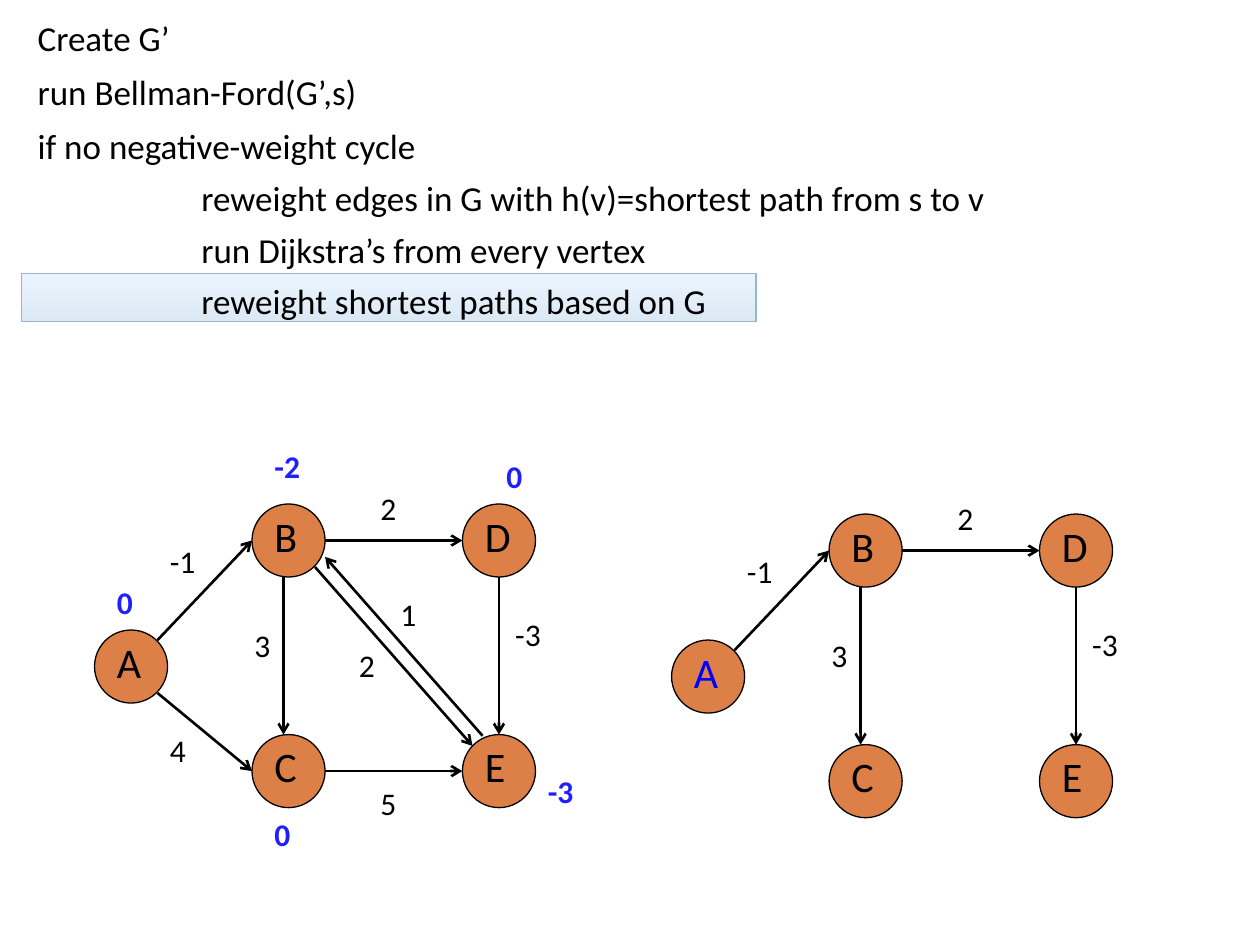
from dataclasses import dataclass

from lxml import etree
from pptx import Presentation
from pptx.dml.color import RGBColor
from pptx.enum.shapes import MSO_CONNECTOR, MSO_SHAPE
from pptx.enum.text import MSO_AUTO_SIZE
from pptx.oxml.ns import qn
from pptx.util import Inches, Pt

STRAIGHT = MSO_CONNECTOR.STRAIGHT
CIRCLE = MSO_SHAPE.OVAL
RECTANGLE = MSO_SHAPE.RECTANGLE
GROW = MSO_AUTO_SIZE.SHAPE_TO_FIT_TEXT
BLANK_LAYOUT = 6


@dataclass(frozen=True)
class Theme:
    font: str = "Calibri"
    ink: str = "000000"
    node: str = "DD8047"
    start: str = "0000FF"
    distance: str = "1F1FFF"
    band_line: str = "94B6D2"
    band_stops: tuple = ("8BB7DB", "BDDFFF")
    band_opacity: int = 30
    step_size: int = 20
    node_size: int = 24
    label_size: int = 18


class GraphSlide:
    def __init__(self, slide, theme):
        self.shapes = slide.shapes
        self.theme = theme

    def format_runs(self, paragraph, size, color, bold=False):
        for run in paragraph.runs:
            run.font.name = self.theme.font
            run.font.size = Pt(size)
            run.font.bold = bold
            run.font.color.rgb = RGBColor.from_string(color)

    def text(self, shapes, text, box, size, color, bold=False, wrap=True):
        shape = shapes.add_textbox(*map(Inches, box))
        text_frame = shape.text_frame
        text_frame.word_wrap = wrap
        text_frame.auto_size = GROW
        text_frame.text = text
        self.format_runs(text_frame.paragraphs[0], size, color, bold)

    def label(self, text, left, top, color, bold=False):
        width = 0.43 if len(text) > 1 else 0.34
        self.text(self.shapes, text, (left, top, width, 0.4),
                  self.theme.label_size, color, bold, wrap=False)

    def node(self, name, left, top, color):
        group = self.shapes.add_group_shape()
        circle = group.shapes.add_shape(
            CIRCLE, *map(Inches, (left, top, 0.58, 0.58)))
        circle.shadow.inherit = False
        circle.fill.solid()
        circle.fill.fore_color.rgb = RGBColor.from_string(self.theme.node)
        circle.line.color.rgb = RGBColor.from_string(self.theme.ink)
        circle.line.width = Pt(0.75)
        self.text(group.shapes, name, (left + 0.08, top, 0.5, 0.5),
                  self.theme.node_size, color)

    def arrow(self, x1, y1, x2, y2):
        connector = self.shapes.add_connector(
            STRAIGHT, *map(Inches, (x1, y1, x2, y2)))
        connector.line.color.rgb = RGBColor.from_string(self.theme.ink)
        connector.line.width = Pt(1.5)
        line = connector.line._get_or_add_ln()
        etree.SubElement(line, qn("a:tailEnd"), type="arrow")
        etree.SubElement(connector._element.spPr, qn("a:effectLst"))

    def graph(self, nodes, edges, dx=0, dy=0, start_color=None):
        """Draw nodes, then weighted edges, shifted by (dx, dy)."""
        for name in nodes:
            left, top = NODES[name]
            color = start_color if name == "A" and start_color else self.theme.ink
            self.node(name, left + dx, top + dy, color)
        for edge in edges:
            (x1, y1, x2, y2), weight, (left, top) = EDGES[edge]
            self.arrow(x1 + dx, y1 + dy, x2 + dx, y2 + dy)
            self.label(weight, left + dx, top + dy, self.theme.ink)

    def band(self, left, top, width, height):
        shape = self.shapes.add_shape(
            RECTANGLE, *map(Inches, (left, top, width, height)))
        shape.shadow.inherit = False
        shape.fill.gradient()
        shape.fill.gradient_angle = 90
        for stop, color in zip(shape.fill.gradient_stops, self.theme.band_stops):
            stop.color.rgb = RGBColor.from_string(color)
        for color in shape._element.spPr.iter(qn("a:srgbClr")):
            etree.SubElement(color, qn("a:alpha"),
                             val=str(self.theme.band_opacity * 1000))
        shape.line.color.rgb = RGBColor.from_string(self.theme.band_line)
        shape.line.width = Pt(0.79)

    def steps(self, steps, left, top, width, height):
        shape = self.shapes.add_textbox(
            *map(Inches, (left, top, width, height)))
        text_frame = shape.text_frame
        text_frame.word_wrap = True
        text_frame.text = "\n".join(text for text, _ in steps)
        for paragraph, (_, level) in zip(text_frame.paragraphs, steps):
            paragraph.level = level
            paragraph.space_before = Pt(5.5 if level else 7)
            properties = paragraph._p.get_or_add_pPr()
            properties.set("marL", str(Inches(1.3 * level)))
            properties.set("indent", "0")
            self.format_runs(paragraph, self.theme.step_size, self.theme.ink)


LEFT, MIDDLE, RIGHT = 0.75, 2, 3.67
UPPER, LOWER = 4, 5.83
NODES = {"A": (LEFT, 5), "B": (MIDDLE, UPPER), "C": (MIDDLE, LOWER),
         "E": (RIGHT, LOWER), "D": (RIGHT, UPPER)}

# Edge: line ends, weight, place of the weight
EDGES = {
    "AB": ((1.25, 5.08, 2, 4.29), "-1", (1.25, 4.25)),
    "AC": ((1.25, 5.5, 2, 6.12), "4", (1.25, 5.75)),
    "BD": ((2.58, 4.29, 3.67, 4.29), "2", (2.92, 3.83)),
    "DE": ((3.96, 4.58, 3.96, 5.83), "-3", (3.99, 4.83)),
    "EB": ((3.83, 5.84, 2.58, 4.42), "1", (3.08, 4.67)),
    "BE": ((2.5, 4.5, 3.75, 5.92), "2", (2.75, 5.08)),
    "CE": ((2.58, 6.12, 3.67, 6.12), "5", (2.92, 6.17)),
    "BC": ((2.25, 4.58, 2.25, 5.83), "3", (1.92, 4.92)),
}
TREE_EDGES = ("AB", "BD", "DE", "BC")

DISTANCES = [("-2", 2.08, 3.5), ("0", 0.83, 4.58), ("0", 2.08, 6.42),
             ("0", 3.92, 3.58), ("-3", 4.25, 6.08)]

STEPS = [
    ("Create G’", 0),
    ("run Bellman-Ford(G’,s)", 0),
    ("if no negative-weight cycle", 0),
    ("reweight edges in G with h(v)=shortest path from s to v", 1),
    ("run Dijkstra’s from every vertex", 1),
    ("reweight shortest paths based on G", 1),
]


def main():
    presentation = Presentation()
    presentation.slide_width = Inches(10)
    presentation.slide_height = Inches(7.5)
    slide = presentation.slides.add_slide(
        presentation.slide_layouts[BLANK_LAYOUT])
    theme = Theme()
    page = GraphSlide(slide, theme)

    # Shortest-path tree from A
    page.graph(NODES, TREE_EDGES, dx=4.58, dy=0.08, start_color=theme.start)

    # Full graph with the distances h(v)
    page.graph(NODES, EDGES)
    for distance, left, top in DISTANCES:
        page.label(distance, left, top, theme.distance, bold=True)

    # Algorithm with its current step marked
    page.band(0.17, 2.17, 5.83, 0.38)
    page.steps(STEPS, 0.2, 0.08, 8.42, 2.58)

    presentation.save("out.pptx")


if __name__ == "__main__":
    main()
